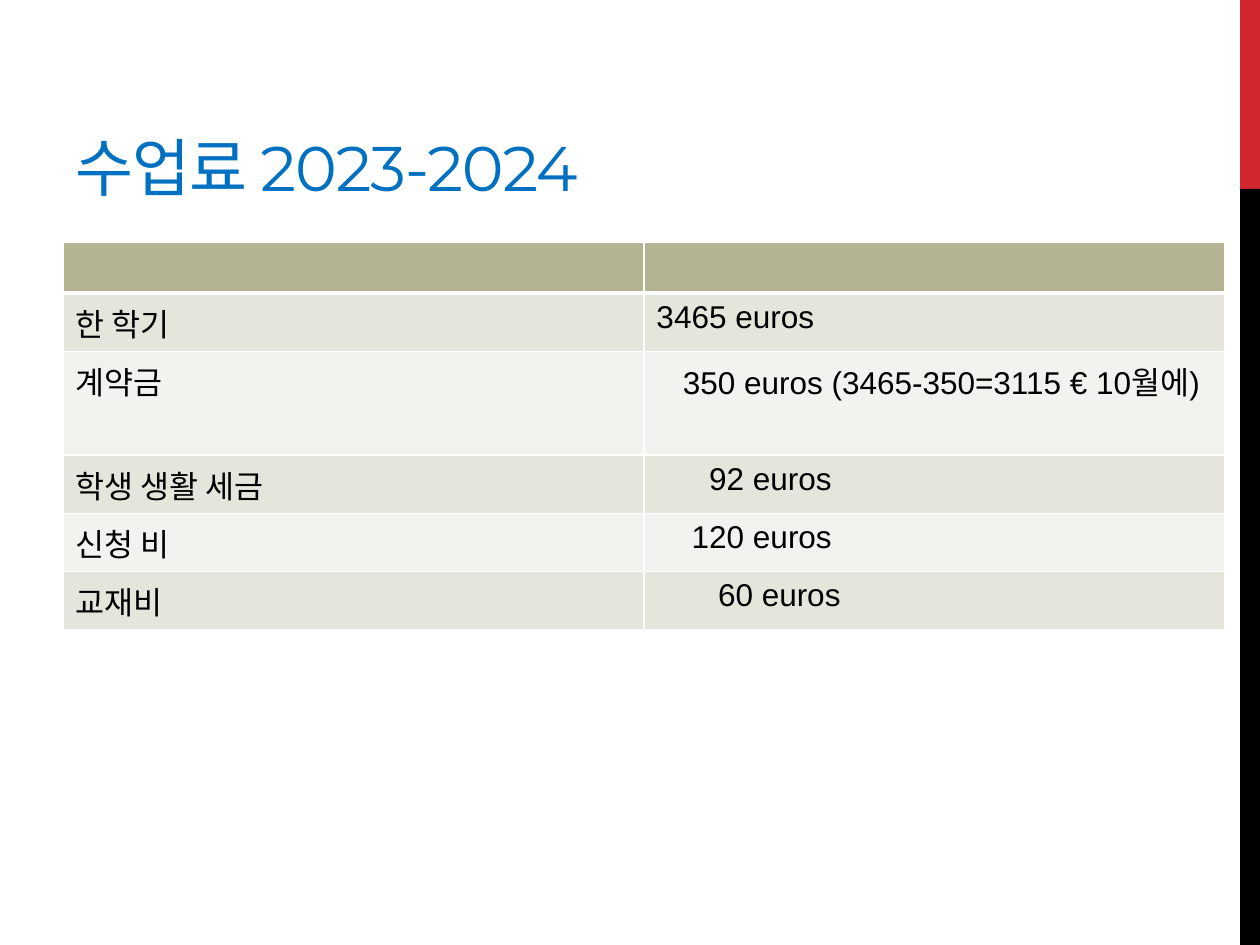
from dataclasses import dataclass

from lxml.etree import SubElement
from pptx import Presentation
from pptx.dml.color import RGBColor
from pptx.enum.shapes import MSO_SHAPE
from pptx.enum.text import MSO_ANCHOR, MSO_AUTO_SIZE, PP_ALIGN
from pptx.oxml.ns import qn
from pptx.util import Cm, Pt

TITLE = "수업료 2023-2024"
FEES = [
    ("한 학기", "3465 euros", 0),
    ("계약금", "350 euros (3465-350=3115 € 10월에)", 0.53),
    ("학생 생활 세금", "92 euros", 1.06),
    ("신청 비", "120 euros", 0.71),
    ("교재비", "60 euros", 1.24),
]


@dataclass(frozen=True)
class Theme:
    title: str = "0070C0"
    text: str = "000000"
    header: str = "B4B392"
    bands: tuple = ("E5E5DC", "F2F2EE")
    border: str = "FFFFFF"
    bars: tuple = ("D1282E", "000000")
    title_font: str = "Montserrat"
    body_font: str = "Arial"
    title_size: int = 36
    body_size: int = 18


THEME = Theme()
SLIDE_WIDTH, SLIDE_HEIGHT = 25.4, 19.05
BAR_WIDTH, BAR_SPLIT = 0.4, 3.81
TABLE_LEFT, TABLE_TOP, TABLE_WIDTH, ROW_HEIGHT = 1.27, 4.88, 23.42, 1.03


def apply_format(target, values):
    for name, value in values.items():
        setattr(target, name, value)


def format_run(run, font_name, size, color):
    apply_format(run.font, {"name": font_name, "size": Pt(size), "bold": False})
    run.font.color.rgb = RGBColor.from_string(color)


def add_bars(slide):
    edges = (0, BAR_SPLIT, SLIDE_HEIGHT)
    for color, top, bottom in zip(THEME.bars, edges, edges[1:]):
        bar = slide.shapes.add_shape(
            MSO_SHAPE.RECTANGLE, Cm(SLIDE_WIDTH - BAR_WIDTH), Cm(top),
            Cm(BAR_WIDTH), Cm(bottom - top))
        bar.shadow.inherit = False
        bar.fill.solid()
        bar.fill.fore_color.rgb = RGBColor.from_string(color)
        bar.line.fill.background()


def add_title(slide):
    title = slide.shapes.title
    apply_format(title, {"left": Cm(1.27), "top": Cm(0.43),
                         "width": Cm(16.08), "height": Cm(3.81)})
    apply_format(title.text_frame, {
        "text": TITLE, "word_wrap": True, "auto_size": MSO_AUTO_SIZE.NONE,
        "vertical_anchor": MSO_ANCHOR.BOTTOM})
    paragraph = title.text_frame.paragraphs[0]
    paragraph.alignment = PP_ALIGN.LEFT
    run = paragraph.runs[0]
    format_run(run, THEME.title_font, THEME.title_size, THEME.title)
    run.font._element.set("spc", "-60")


def format_cell(cell, color, top_width, bottom_width):
    properties = cell._tc.get_or_add_tcPr()
    for side, width in (("L", 1), ("R", 1), ("T", top_width), ("B", bottom_width)):
        line = SubElement(properties, qn(f"a:ln{side}"), w=str(Pt(width)))
        SubElement(SubElement(line, qn("a:solidFill")), qn("a:srgbClr"), val=THEME.border)
    cell.fill.solid()
    cell.fill.fore_color.rgb = RGBColor.from_string(color)


def write_cell(cell, text, indent):
    paragraph = cell.text_frame.paragraphs[0]
    if indent:
        paragraph._p.get_or_add_pPr().set("indent", str(Cm(indent)))
    run = paragraph.add_run()
    run.text = text
    format_run(run, THEME.body_font, THEME.body_size, THEME.text)


def add_fee_table(slide):
    row_count = len(FEES) + 1
    table = slide.shapes.add_table(
        row_count, 2, Cm(TABLE_LEFT), Cm(TABLE_TOP),
        Cm(TABLE_WIDTH), Cm(ROW_HEIGHT * row_count)).table
    apply_format(table, {"first_row": True, "horz_banding": False})
    for cell in table.rows[0].cells:
        format_cell(cell, THEME.header, 1, 3)
    for index, (label, amount, indent) in enumerate(FEES):
        cells = table.rows[index + 1].cells
        for cell, text, offset in zip(cells, (label, amount), (0, indent)):
            format_cell(cell, THEME.bands[index % 2], 3 if index == 0 else 1, 1)
            write_cell(cell, text, offset)


def main():
    presentation = Presentation()
    apply_format(presentation, {"slide_width": Cm(SLIDE_WIDTH),
                                "slide_height": Cm(SLIDE_HEIGHT)})
    slide = presentation.slides.add_slide(presentation.slide_layouts[5])
    add_bars(slide)
    add_title(slide)
    add_fee_table(slide)
    presentation.save("out.pptx")


if __name__ == "__main__":
    main()
